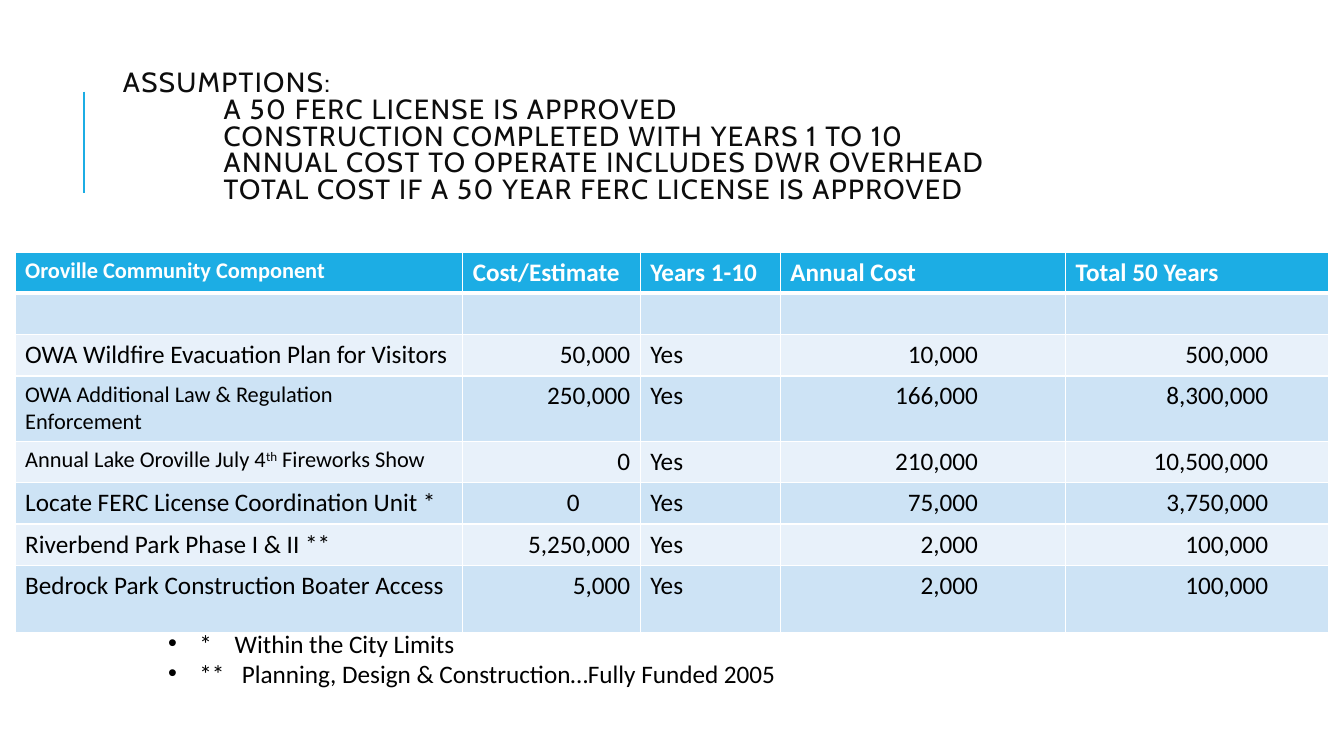
from dataclasses import dataclass
from lxml.etree import SubElement as Sub
from pptx import Presentation
from pptx.dml.color import RGBColor as Rgb
from pptx.enum.shapes import MSO_CONNECTOR as Conn
from pptx.enum.text import MSO_ANCHOR as Anchor, PP_ALIGN as Align
from pptx.oxml import parse_xml
from pptx.oxml.ns import nsdecls, qn
from pptx.util import Pt


@dataclass(frozen=True)
class Theme:
    """Colours, fonts and type sizes of the slide."""
    blue: str = "1CADE4"
    white: str = "FFFFFF"
    black: str = "000000"
    ink: str = "0D0D0D"
    bands: tuple = ("CDE3F5", "E8F1FA")
    head: str = "Cabin"
    body: str = "Calibri"
    title: float = 19.8
    text: int = 18
    small: int = 16


T = Theme()
PX = 9144
PAD = 10
COLS = [444, 176, 139, 283, 261]
ROWS = [41, 41, 41, 65, 41, 41, 41, 67]
RIGHT = [None, PAD, None, 87, 60]
TITLE = [
    "ASSUMPTIONS:",
    "A 50 FERC LICENSE IS APPROVED",
    "CONSTRUCTION COMPLETED WITH YEARS 1 TO 10",
    "ANNUAL COST TO OPERATE INCLUDES DWR OVERHEAD",
    "TOTAL COST IF A 50 YEAR FERC LICENSE IS APPROVED",
]
HEAD = ["Oroville Community Component", "Cost/Estimate", "Years 1-10",
        "Annual Cost", "Total 50 Years"]
DATA = [
    [""] * 5,
    ["OWA Wildfire Evacuation Plan for Visitors", "50,000", "Yes", "10,000", "500,000"],
    ["OWA Additional Law & Regulation Enforcement", "250,000", "Yes", "166,000", "8,300,000"],
    ["Annual Lake Oroville July 4^th^ Fireworks Show", "0", "Yes", "210,000", "10,500,000"],
    ["Locate FERC License Coordination Unit *", "0", "Yes", "75,000", "3,750,000"],
    ["Riverbend Park Phase I & II **", "5,250,000", "Yes", "2,000", "100,000"],
    ["Bedrock Park Construction Boater Access", "5,000", "Yes", "2,000", "100,000"],
]
SMALL = {(0, 0), (3, 0), (4, 0)}
SHIFT = {(5, 1): 60}
NOTES = [("*\tWithin the City Limits", 66),
         ("**\tPlanning, Design & Construction…Fully Funded 2005", 73)]


def emu(*vals):
    """Turn px lengths into EMU."""
    return [round(v * PX) for v in vals]


def write(par, text, size=T.text, font=T.body, color=T.black, bold=False,
          align=Align.LEFT, space=None, track=0, left=0, hang=0, bullet="", tab=0):
    """Fill a paragraph; parts between carets are raised."""
    par.alignment = align
    if space:
        par.line_spacing = space
    props = par._p.get_or_add_pPr()
    props.set("marL", str(left * PX))
    props.set("indent", str(-hang * PX))
    if bullet:
        Sub(props, qn("a:buFont"), typeface="Arial")
        Sub(props, qn("a:buChar"), char=bullet)
    if tab:
        stops = Sub(props, qn("a:tabLst"))
        Sub(stops, qn("a:tab"), pos=str(tab * PX), algn="l")
    for i, part in enumerate(text.split("^") if text else []):
        run = par.add_run()
        run.text = part
        run.font.size, run.font.name, run.font.bold = Pt(size), font, bold
        run.font.color.rgb = Rgb.from_string(color)
        attrs = run._r.get_or_add_rPr()
        if track:
            attrs.set("spc", str(track))
        if i % 2:
            attrs.set("baseline", "30000")


def frame(slide, box):
    """Add a wrapping text box and return its frame."""
    body = slide.shapes.add_textbox(*emu(*box)).text_frame
    body.word_wrap = True
    return body


def lines(body, count):
    """Return the given number of paragraphs of a frame."""
    return [body.paragraphs[0]] + [body.add_paragraph() for _ in range(count - 1)]


def edge(cell, top, low):
    """Draw white borders with the given top and bottom widths."""
    props = cell._tc.get_or_add_tcPr()
    for i, (side, wide) in enumerate(zip("LRTB", (1, 1, top, low))):
        props.insert(i, parse_xml(
            f'<a:ln{side} {nsdecls("a")} w="{Pt(wide)}"><a:solidFill>'
            f'<a:srgbClr val="{T.white}"/></a:solidFill></a:ln{side}>'))


def title(slide, box):
    """Place the accent rule and the list of assumptions."""
    x, y, w, h = box
    rule = slide.shapes.add_connector(
        Conn.STRAIGHT, *emu(x, y + 20, x, y + 120))
    rule.line.color.rgb = Rgb.from_string(T.blue)
    rule.line.width = Pt(1.5)
    Sub(rule._element.spPr, qn("a:effectLst"))
    body = frame(slide, (x + 29, y, w - 29, h))
    body.margin_top = 0
    for i, (par, text) in enumerate(zip(lines(body, len(TITLE)), TITLE)):
        write(par, text, size=T.title, font=T.head, color=T.ink,
              space=0.8, track=100, left=100 if i else 0)


def costs(slide, box):
    """Place the table of costs."""
    grid = slide.shapes.add_table(len(ROWS), len(COLS), *emu(*box)).table
    for col, wide in zip(grid.columns, COLS):
        col.width = wide * PX
    for r, (row, high) in enumerate(zip([HEAD] + DATA, ROWS)):
        grid.rows[r].height = high * PX
        for c, text in enumerate(row):
            cell, top = grid.cell(r, c), r == 0
            num = RIGHT[c] and not top
            cell.margin_right = PX * (SHIFT.get((r, c), RIGHT[c]) if num else PAD)
            cell.fill.solid()
            cell.fill.fore_color.rgb = Rgb.from_string(
                T.blue if top else T.bands[(r + 1) % 2])
            edge(cell, 3 if r == 1 else 1, 3 if top else 1)
            write(cell.text_frame.paragraphs[0], text, bold=top,
                  size=T.small if (r, c) in SMALL else T.text,
                  color=T.white if top else T.black,
                  align=Align.RIGHT if num else Align.LEFT)


def notes(slide, box):
    """Place the footnotes below the table."""
    body = frame(slide, box)
    body.vertical_anchor = Anchor.TOP
    for par, (text, tab) in zip(lines(body, len(NOTES)), NOTES):
        write(par, text, left=31, hang=31, bullet="•", tab=tab)


def main():
    """Build and save the deck."""
    deck = Presentation()
    deck.slide_width, deck.slide_height = emu(1333, 750)
    slide = deck.slides.add_slide(deck.slide_layouts[6])
    title(slide, (83, 71, 1201, 179))
    costs(slide, (15, 250, sum(COLS), sum(ROWS)))
    notes(slide, (157, 618, 756, 131))
    deck.save("out.pptx")


if __name__ == "__main__":
    main()
